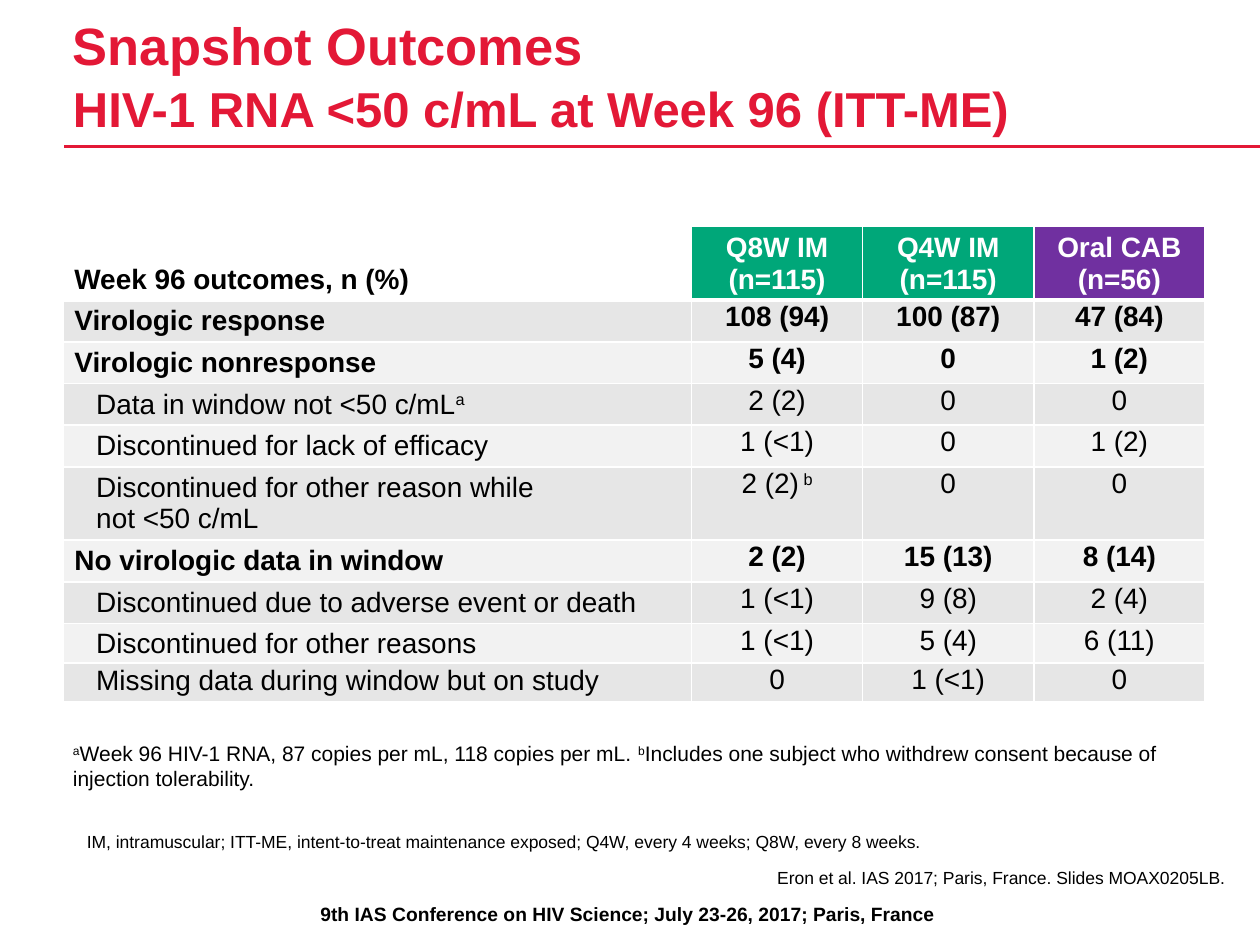
import dataclasses

import pptx
import pptx.dml.color
import pptx.enum.shapes
import pptx.enum.text
import pptx.oxml
import pptx.oxml.ns
import pptx.util

Cm = pptx.util.Cm
Pt = pptx.util.Pt
ALIGN = pptx.enum.text.PP_ALIGN
ANCHOR = pptx.enum.text.MSO_ANCHOR


@dataclasses.dataclass(frozen=True)
class Theme:
    font: str = "Arial"
    red: str = "E31836"
    black: str = "000000"
    white: str = "FFFFFF"
    green: str = "00A779"
    purple: str = "7030A0"
    bands: tuple = ("E6E6E6", "F2F2F2")
    title: int = 30
    subtitle: int = 28
    table: int = 16
    footnote: int = 12
    venue: int = 11
    small: int = 10


THEME = Theme()
FLUSH = dict.fromkeys(("margin_left", "margin_top", "margin_right", "margin_bottom"), 0)


def rgb(value):
    return pptx.dml.color.RGBColor.from_string(value)


def apply(target, values):
    for name, value in values.items():
        setattr(target, name, value)


class OutcomeSlide:
    """Adds styled elements to one slide; ^ encloses superscripts and \\v breaks a line."""

    def __init__(self, slide, theme):
        self.slide = slide
        self.theme = theme

    def put_text(self, frame, text, sizes, color=None, bold=False, indent=0, **layout):
        for number, content in enumerate(text.split("\n")):
            paragraph = frame.paragraphs[0] if number == 0 else frame.add_paragraph()
            properties = paragraph._p.get_or_add_pPr()
            properties.set("marL", str(int(indent)))
            properties.set("indent", "0")
            properties.append(pptx.oxml.parse_xml(
                f"<a:buNone {pptx.oxml.ns.nsdecls('a')}/>"))
            apply(paragraph, {"space_before": Pt(0), **layout})
            for row, line in enumerate(content.split("\v")):
                if row:
                    paragraph.add_line_break()
                for part, words in enumerate(line.split("^")):
                    if not words:
                        continue
                    run = paragraph.add_run()
                    run.text = words
                    apply(run.font, {"name": self.theme.font, "bold": bold,
                                     "size": Pt(sizes[min(row, len(sizes) - 1)])})
                    run.font.color.rgb = rgb(color or self.theme.black)
                    if part % 2:
                        run._r.get_or_add_rPr().set("baseline", "30000")

    def fill_box(self, shape, place, text, sizes, frame_format, **style):
        apply(shape, dict(zip(("left", "top", "width", "height"), map(Cm, place))))
        apply(shape.text_frame, {"word_wrap": True,
                                 "auto_size": pptx.enum.text.MSO_AUTO_SIZE.NONE,
                                 **frame_format})
        self.put_text(shape.text_frame, text, sizes, **style)

    def placeholder(self, index, place, text, sizes, anchor, **style):
        self.fill_box(self.slide.placeholders[index], place, text, sizes,
                      {**FLUSH, "vertical_anchor": anchor}, **style)

    def textbox(self, place, text, size, anchor=ANCHOR.TOP, **style):
        box = self.slide.shapes.add_textbox(0, 0, 0, 0)
        self.fill_box(box, place, text, [size], {"vertical_anchor": anchor}, **style)

    def rule(self, left, right, top):
        line = self.slide.shapes.add_connector(
            pptx.enum.shapes.MSO_CONNECTOR.STRAIGHT, Cm(left), Cm(top), Cm(right), Cm(top))
        line.line.color.rgb = rgb(self.theme.red)
        line.line.width = Pt(2)
        line._element.spPr.append(pptx.oxml.parse_xml(
            f"<a:effectLst {pptx.oxml.ns.nsdecls('a')}/>"))

    def borders(self, cell, **widths):
        properties = cell._tc.get_or_add_tcPr()
        for side in "LRTB":
            properties.append(pptx.oxml.parse_xml(
                f'<a:ln{side} {pptx.oxml.ns.nsdecls("a")} w="{int(Pt(widths.get(side, 1)))}">'
                f'<a:solidFill><a:srgbClr val="{self.theme.white}"/></a:solidFill></a:ln{side}>'))

    def cell(self, cell, text, fill, margin, anchor=ANCHOR.TOP, edges=None, **style):
        apply(cell, {"margin_left": Cm(0.03), "margin_right": Cm(0.03),
                     "margin_top": Cm(margin), "margin_bottom": Cm(margin),
                     "vertical_anchor": anchor})
        self.borders(cell, **(edges or {}))
        if fill:
            cell.fill.solid()
            cell.fill.fore_color.rgb = rgb(fill)
        else:
            cell.fill.background()
        self.put_text(cell.text_frame, text, [self.theme.table], **style)

    def table(self, left, top, widths, headings, outcomes):
        heights = [1.48] + [outcome[-1] for outcome in outcomes]
        table = self.slide.shapes.add_table(
            len(heights), len(widths), Cm(left), Cm(top),
            Cm(sum(widths)), Cm(sum(heights))).table
        apply(table, {"first_row": False, "horz_banding": False})
        for column, width in zip(table.columns, widths):
            column.width = Cm(width)
        for row, height in zip(table.rows, heights):
            row.height = Cm(height)
        for column, (text, fill) in enumerate(headings):
            style = ({"color": self.theme.white, "alignment": ALIGN.CENTER}
                     if fill else {"indent": Cm(0.2)})
            self.cell(table.cell(0, column), text, fill, 0.1, ANCHOR.BOTTOM, {"B": 3},
                      bold=True, line_spacing=Pt(18), **style)
        for row, (label, values, main_outcome, margin, _) in enumerate(outcomes, start=1):
            fill = self.theme.bands[(row - 1) % 2]
            edges = {"T": 3} if row == 1 else None
            self.cell(table.cell(row, 0), label, fill, margin, edges=edges, bold=main_outcome,
                      indent=Cm(0.2 if main_outcome else 0.64), line_spacing=Pt(18))
            for column, value in enumerate(values, start=1):
                self.cell(table.cell(row, column), value, fill, 0.03, edges=edges,
                          bold=main_outcome, alignment=ALIGN.CENTER)


HEADINGS = [
    ("Week 96 outcomes, n (%)", None),
    ("Q8W IM\v(n=115)", THEME.green),
    ("Q4W IM\v(n=115)", THEME.green),
    ("Oral CAB\v(n=56)", THEME.purple),
]
OUTCOMES = [
    ("Virologic response", ("108 (94)", "100 (87)", "47 (84)"), True, 0.1, 0.84),
    ("Virologic nonresponse", ("5 (4)", "0", "1 (2)"), True, 0.1, 0.84),
    ("Data in window not <50 c/mL^a^", ("2 (2)", "0", "0"), False, 0.1, 0.84),
    ("Discontinued for lack of efficacy", ("1 (<1)", "0", "1 (2)"), False, 0.1, 0.84),
    ("Discontinued for other reason while\nnot <50 c/mL", ("2 (2)^ b^", "0", "0"),
     False, 0.1, 1.48),
    ("No virologic data in window", ("2 (2)", "15 (13)", "8 (14)"), True, 0.1, 0.84),
    ("Discontinued due to adverse event or death", ("1 (<1)", "9 (8)", "2 (4)"),
     False, 0.1, 0.84),
    ("Discontinued for other reasons", ("1 (<1)", "5 (4)", "6 (11)"), False, 0.08, 0.79),
    ("Missing data during window but on study", ("0", "1 (<1)", "0"), False, 0.03, 0.79),
]


def main():
    deck = pptx.Presentation()
    apply(deck, {"slide_width": Cm(25.4), "slide_height": Cm(19.05)})
    two_content = deck.slide_layouts[3]
    page = OutcomeSlide(deck.slides.add_slide(two_content), THEME)
    page.textbox((0.15, 18.06, 25.02, 0.74),
                 "9th IAS Conference on HIV Science; July 23-26, 2017; Paris, France",
                 THEME.venue, bold=True, alignment=ALIGN.CENTER)
    page.rule(1.3, 25.4, 2.95)
    page.placeholder(0, (1.47, 0.43, 20.96, 2.34),
                     "Snapshot Outcomes\vHIV-1 RNA <50 c/mL at Week 96 (ITT-ME)",
                     [THEME.title, THEME.subtitle], ANCHOR.BOTTOM, color=THEME.red,
                     bold=True, alignment=ALIGN.LEFT, line_spacing=Pt(35))
    page.placeholder(1, (1.47, 17.48, 23.22, 0.51),
                     "Eron et al. IAS 2017; Paris, France. Slides MOAX0205LB.",
                     [THEME.small], ANCHOR.TOP, alignment=ALIGN.RIGHT, space_after=Pt(3))
    page.table(1.27, 4.57, [12.67] + [3.45] * 3, HEADINGS, OUTCOMES)
    page.placeholder(2, (1.47, 14.45, 23.22, 1.5),
                     "^a^Week 96 HIV-1 RNA, 87 copies per mL, 118 copies per mL. "
                     "^b^Includes one subject who withdrew consent because of"
                     "\vinjection tolerability.",
                     [THEME.footnote], ANCHOR.BOTTOM, space_after=Pt(3))
    page.textbox((1.5, 16.61, 23.22, 0.69),
                 "IM, intramuscular; ITT-ME, intent-to-treat maintenance exposed; "
                 "Q4W, every 4 weeks; Q8W, every 8 weeks.",
                 THEME.small, ANCHOR.BOTTOM)
    deck.save("out.pptx")


if __name__ == "__main__":
    main()
